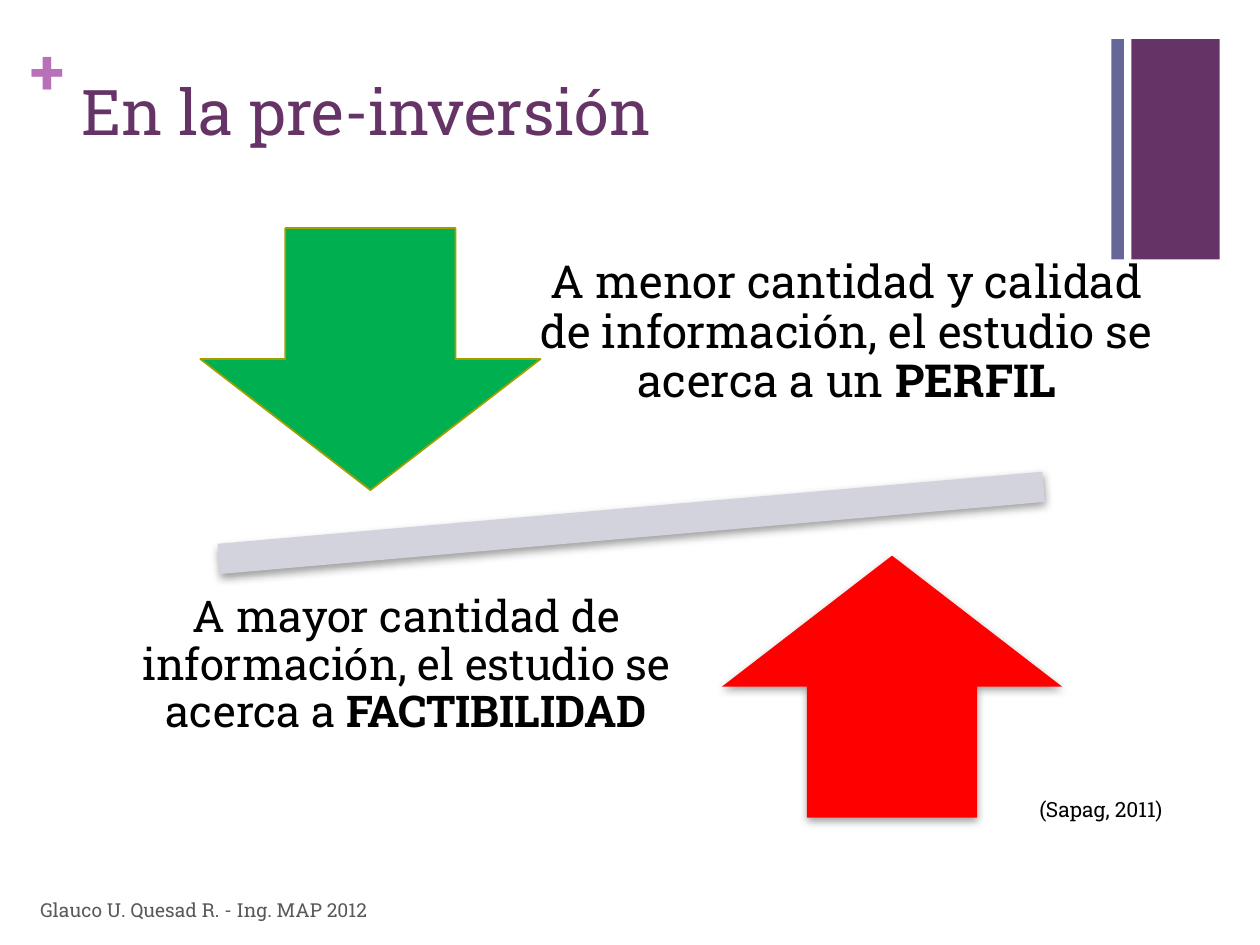
from dataclasses import dataclass
from typing import Optional

from lxml.etree import SubElement
from pptx import Presentation
from pptx.dml.color import RGBColor
from pptx.enum.shapes import MSO_SHAPE as SHAPE
from pptx.enum.text import MSO_ANCHOR as ANCHOR, PP_ALIGN as ALIGN
from pptx.oxml.ns import qn
from pptx.util import Inches, Pt

FONT = "Roboto Slab"
PURPLE = RGBColor(0x66, 0x33, 0x66)
SLATE = RGBColor(0x66, 0x66, 0x99)
ORCHID = RGBColor(0xB8, 0x70, 0xB8)
LAVENDER = RGBColor(0xD3, 0xD3, 0xDE)
GREEN = RGBColor(0x00, 0xB0, 0x50)
OLIVE = RGBColor(0xA0, 0x9E, 0x00)
RED = RGBColor(0xFF, 0x00, 0x00)
BLACK = RGBColor(0x00, 0x00, 0x00)
GRAY = RGBColor(0x59, 0x59, 0x59)


@dataclass
class Figure:
    kind: SHAPE
    box: tuple
    fill: RGBColor
    line: Optional[RGBColor] = None
    rotation: float = 0
    shadow: bool = False


@dataclass
class Label:
    box: tuple
    runs: tuple
    size: float
    color: RGBColor
    insets: tuple = (0.1, 0.05, 0.1, 0.05)
    anchor: ANCHOR = ANCHOR.TOP
    align: ALIGN = ALIGN.LEFT
    spacing: float = 1.0


FIGURES = [
    Figure(SHAPE.RECTANGLE, (8.98, 0.31, 0.7, 1.75), PURPLE),
    Figure(SHAPE.RECTANGLE, (8.82, 0.31, 0.1, 1.75), SLATE),
    Figure(SHAPE.MATH_MINUS, (0.54, 3.64, 8.94, 1.02), LAVENDER, rotation=-5, shadow=True),
    Figure(SHAPE.DOWN_ARROW, (1.59, 1.81, 2.7, 2.08), GREEN, line=OLIVE),
    Figure(SHAPE.UP_ARROW, (5.73, 4.41, 2.7, 2.08), RED, shadow=True),
]
STATEMENT = {"color": BLACK, "anchor": ANCHOR.MIDDLE, "align": ALIGN.CENTER, "spacing": 0.9}
LABELS = [
    Label((0.24, 0.25, 0.29, 0.61), (("+", True),), 36, ORCHID, insets=(0, 0, 0, 0)),
    Label((0.55, 0.53, 8.26, 1.22), (("En la pre-inversión", False),), 36, PURPLE),
    Label((4.03, 1.55, 5.38, 2.19),
          (("A menor cantidad y calidad de información, el estudio se acerca a un ", False),
           ("PERFIL", True)), 26, insets=(0.2, 0.2, 0.2, 0.2), **STATEMENT),
    Label((0.67, 4.46, 5.11, 2.19),
          (("A mayor cantidad de información, el estudio se acerca a ", False),
           ("FACTIBILIDAD", True)), 25, insets=(0.19, 0.19, 0.19, 0.73), **STATEMENT),
    Label((0.22, 7.02, 6.7, 0.4), (("Glauco U. Quesad R. - Ing. MAP 2012", False),), 11, GRAY,
          anchor=ANCHOR.MIDDLE),
    Label((8.15, 6.27, 1.26, 0.3), (("(Sapag, 2011)", False),), 12, BLACK),
]


def set_all(target, values: dict) -> None:
    for name, value in values.items():
        setattr(target, name, value)


def add_shadow(sp) -> None:
    effects = sp._element.spPr.find(qn("a:effectLst"))
    outer = SubElement(effects, qn("a:outerShdw"), blurRad=str(Pt(5)), dist=str(Pt(2)),
                       dir="5400000", rotWithShape="0")
    color = SubElement(outer, qn("a:srgbClr"), val="808080")
    SubElement(color, qn("a:alpha"), val="75000")


def draw_figure(s, figure: Figure) -> None:
    sp = s.shapes.add_shape(figure.kind, *map(Inches, figure.box))
    sp.rotation = figure.rotation
    sp.fill.solid()
    sp.fill.fore_color.rgb = figure.fill
    if figure.line is None:
        sp.line.fill.background()
    else:
        sp.line.color.rgb = figure.line
        sp.line.width = Pt(1)
    sp.shadow.inherit = False
    if figure.shadow:
        add_shadow(sp)


def draw_label(s, label: Label) -> None:
    tf = s.shapes.add_textbox(*map(Inches, label.box)).text_frame
    sides = ("margin_left", "margin_top", "margin_right", "margin_bottom")
    set_all(tf, {"word_wrap": True, "vertical_anchor": label.anchor,
                 **dict(zip(sides, map(Inches, label.insets)))})
    p = tf.paragraphs[0]
    set_all(p, {"alignment": label.align, "line_spacing": label.spacing})
    for text, bold in label.runs:
        r = p.add_run()
        r.text = text
        set_all(r.font, {"name": FONT, "size": Pt(label.size), "bold": bold})
        r.font.color.rgb = label.color


def main() -> None:
    """Build the pre-investment balance slide."""
    prs = Presentation()
    set_all(prs, {"slide_width": Inches(10), "slide_height": Inches(7.5)})
    s = prs.slides.add_slide(prs.slide_layouts[6])
    for figure in FIGURES:
        draw_figure(s, figure)
    for label in LABELS:
        draw_label(s, label)
    prs.save("out.pptx")


if __name__ == "__main__":
    main()
